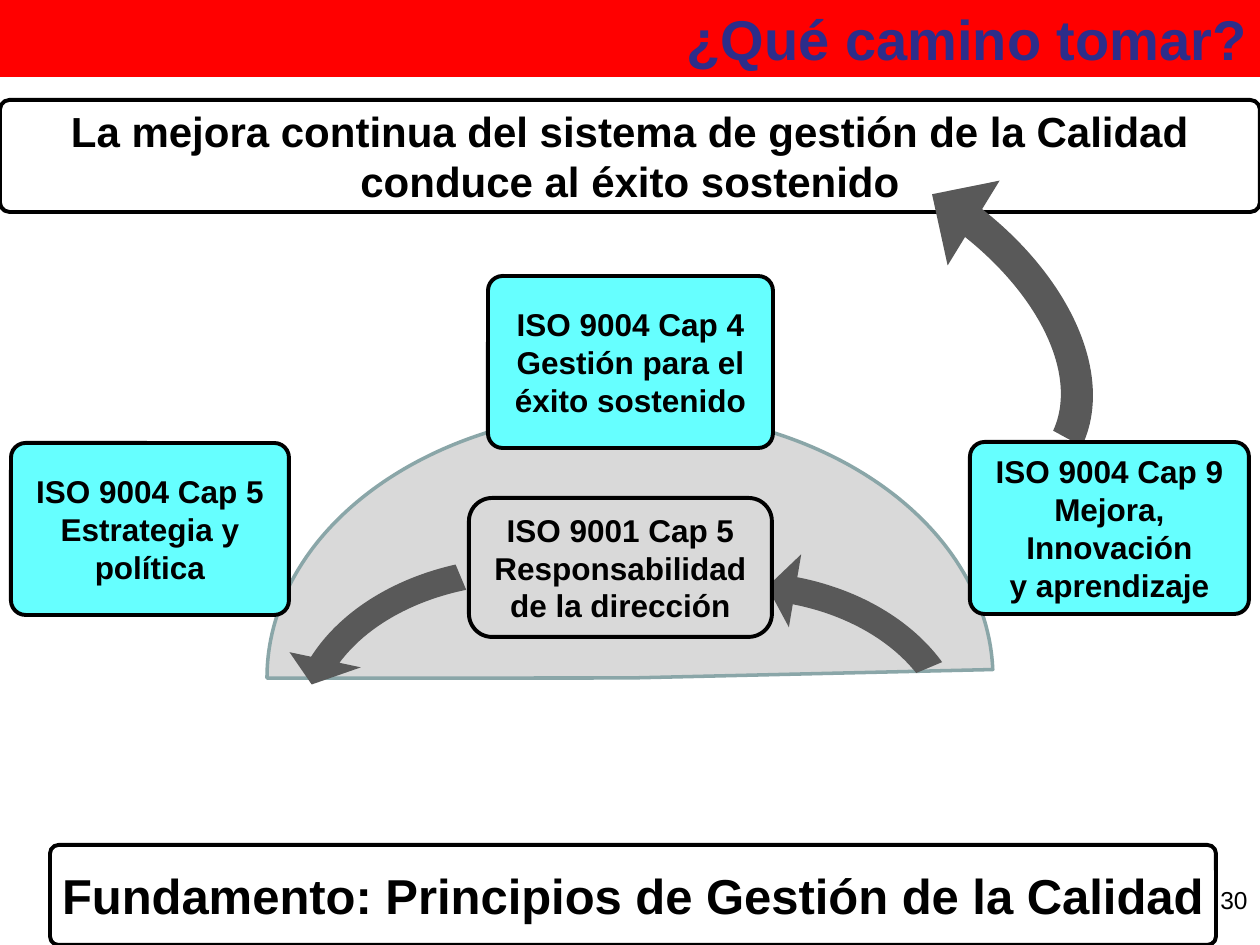
from dataclasses import dataclass
from typing import Optional

from pptx import Presentation
from pptx import util as u
from pptx.dml.color import RGBColor
from pptx.enum import shapes, text
from pptx.oxml.ns import qn

EMU_PER_PX = 914400 / 126
Kind = shapes.MSO_SHAPE
Align = text.PP_ALIGN


@dataclass(frozen=True)
class Theme:
    font: str = "Arial"
    white: str = "FFFFFF"
    black: str = "000000"
    red: str = "FF0000"
    navy: str = "2D2D8A"
    cyan: str = "66FFFF"
    light_gray: str = "D9D9D9"
    dark_gray: str = "595959"
    arc_edge: str = "8AA6A8"
    title: int = 32
    foundation: int = 28
    headline: int = 24
    body: int = 18
    number: int = 14
    border: float = 2.25
    arc_border: float = 2
    corner: float = 0.085


THEME = Theme()


@dataclass(frozen=True)
class Area:
    left: int
    top: int
    width: int
    height: int

    def emu(self) -> tuple:
        return tuple(px(n) for n in (self.left, self.top, self.width, self.height))


@dataclass(frozen=True)
class Box:
    """A bordered rounded box; in words, \\n parts paragraphs and \\v parts lines."""
    area: Area
    words: str
    fill: str = THEME.cyan
    size: int = THEME.body
    corner: Optional[float] = THEME.corner
    wrap: bool = True


@dataclass(frozen=True)
class Arrow:
    area: Area
    rotation: float
    adjustments: tuple


HEADLINE = Box(
    Area(0, 100, 1260, 112),
    "La mejora continua del sistema de gestión de la Calidad\nconduce al éxito sostenido",
    THEME.white, THEME.headline, wrap=False)
FOUNDATION = Box(
    Area(50, 845, 1166, 100), "Fundamento: Principios de Gestión de la Calidad",
    THEME.white, THEME.foundation, wrap=False)
CHAPTERS = (
    Box(Area(488, 276, 285, 172), "ISO 9004 Cap 4\vGestión para el éxito sostenido"),
    Box(Area(970, 442, 279, 172), "ISO 9004 Cap 9\vMejora,\nInnovación\vy aprendizaje"),
    Box(Area(11, 443, 278, 172), "ISO 9004 Cap 5\vEstrategia y política"),
    Box(Area(469, 498, 303, 139), "ISO 9001 Cap 5\vResponsabilidad\nde la dirección",
        THEME.light_gray, corner=None),
)
ARROWS = (
    Arrow(Area(541, 493, 398, 509), 270, (0.069, 5.86, 204.39, 175.74, 0.093)),
    Arrow(Area(266, 534, 518, 392), 180, (0.069, 4.39, 204.39, 175.66, 0.093)),
    Arrow(Area(655, 28, 398, 587), 300.8, (0.082, 11.42, 204.15, 163.23, 0.125)),
)
ARC_AREA = Area(267, 411, 726, 534)
ARC_ADJUSTMENTS = (107.98, 215.2, 0.5)
TITLE_AREA = Area(0, 0, 1260, 77)
NUMBER_AREA = Area(966, 879, 294, 66)


def px(length: int) -> u.Emu:
    return u.Emu(round(length * EMU_PER_PX))


def add_shape(page, kind, area: Area, fill: str, edge: Optional[str] = None,
              edge_width: float = THEME.border, adjustments: tuple = ()):
    shape = page.shapes.add_shape(kind, *area.emu())
    shape.shadow.inherit = False
    shape.fill.solid()
    shape.fill.fore_color.rgb = RGBColor.from_string(fill)
    if edge:
        shape.line.color.rgb = RGBColor.from_string(edge)
        shape.line.width = u.Pt(edge_width)
    else:
        shape.line.fill.background()
    for index, value in enumerate(adjustments):
        shape.adjustments[index] = value
    return shape


def write(shape, words: str, size: int, color: str = THEME.black, align=Align.CENTER,
          bold: bool = True, wrap: bool = True, anchor=text.MSO_ANCHOR.MIDDLE) -> None:
    frame = shape.text_frame
    frame.text = words
    frame.word_wrap = wrap
    frame.vertical_anchor = anchor
    for paragraph in frame.paragraphs:
        paragraph.alignment = align
        font = paragraph.font
        font.name = THEME.font
        font.size = u.Pt(size)
        font.bold = bold
        font.color.rgb = RGBColor.from_string(color)


def draw_box(page, box: Box) -> None:
    adjustments = () if box.corner is None else (box.corner,)
    shape = add_shape(page, Kind.ROUNDED_RECTANGLE, box.area, box.fill, THEME.black,
                      adjustments=adjustments)
    write(shape, box.words, box.size, wrap=box.wrap)


def draw_arrow(page, arrow: Arrow) -> None:
    shape = add_shape(page, Kind.CIRCULAR_ARROW, arrow.area, THEME.dark_gray,
                      adjustments=arrow.adjustments)
    shape.rotation = arrow.rotation
    shape._element.spPr.find(qn("a:xfrm")).set("flipV", "1")


def main() -> None:
    deck = Presentation()
    deck.slide_width, deck.slide_height = px(1260), px(945)
    page = deck.slides.add_slide(deck.slide_layouts[6])

    add_shape(page, Kind.BLOCK_ARC, ARC_AREA, THEME.light_gray, THEME.arc_edge,
              THEME.arc_border, ARC_ADJUSTMENTS)
    draw_box(page, HEADLINE)
    for arrow in ARROWS:
        draw_arrow(page, arrow)
    for chapter in CHAPTERS:
        draw_box(page, chapter)

    title = add_shape(page, Kind.RECTANGLE, TITLE_AREA, THEME.red)
    write(title, "¿Qué camino tomar?", THEME.title, THEME.navy, Align.RIGHT)
    draw_box(page, FOUNDATION)
    number = page.shapes.add_textbox(*NUMBER_AREA.emu())
    write(number, "30", THEME.number, align=Align.RIGHT, bold=False,
          anchor=text.MSO_ANCHOR.TOP)

    deck.save("out.pptx")


if __name__ == "__main__":
    main()
